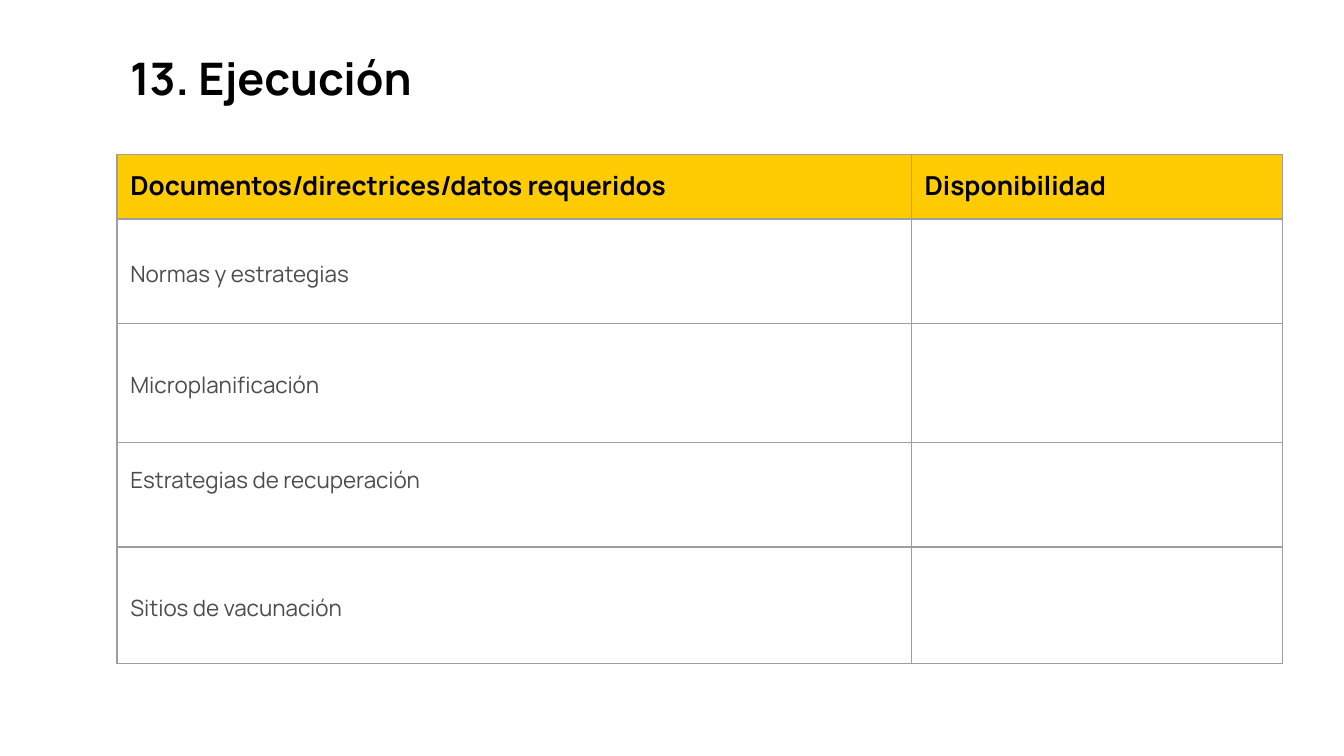
"""Build the slide on execution: a title and a table of required documents."""
from dataclasses import dataclass

from lxml import etree
from pptx import Presentation
from pptx.dml.color import RGBColor
from pptx.enum.text import MSO_ANCHOR
from pptx.oxml.ns import qn
from pptx.util import Inches, Pt

TOP, MIDDLE = MSO_ANCHOR.TOP, MSO_ANCHOR.MIDDLE
FONT = "Manrope"
BLACK, GREY, GOLD, RULE = "000000", "4C4C4C", "FFCB03", "9E9E9E"
PAD = 0.1
LEFT = 0.87
WIDTHS = (5.91, 2.76)


@dataclass(frozen=True)
class Style:
    size: int
    color: str
    bold: bool
    lead: float = 1.0


@dataclass(frozen=True)
class Row:
    texts: tuple[str, ...]
    height: float
    head: bool = False
    base: float = PAD


TITLE = Style(24, BLACK, True)
HEAD = Style(14, BLACK, True)
BODY = Style(12, GREY, False, 1.15)
ROWS = (
    Row(("Documentos/directrices/datos requeridos", "Disponibilidad"), 0.48, head=True),
    Row(("Normas y estrategias", ""), 0.78),
    Row(("Microplanificación", ""), 0.88),
    Row(("Estrategias de recuperación", ""), 0.78, base=0.36),
    Row(("Sitios de vacunación", ""), 0.87),
)


def rgb(code: str) -> RGBColor:
    return RGBColor.from_string(code)


def pad(box, base: float = PAD) -> None:
    box.margin_left = box.margin_right = box.margin_top = Inches(PAD)
    box.margin_bottom = Inches(base)


def write(frame, text: str, style: Style) -> None:
    para = frame.paragraphs[0]
    para.line_spacing = style.lead
    para.font.size = Pt(style.size)
    if text:
        run = para.add_run()
        run.text = text
        run.font.name = FONT
        run.font.size = Pt(style.size)
        run.font.bold = style.bold
        run.font.color.rgb = rgb(style.color)


def edge(cell) -> None:
    props = cell._tc.get_or_add_tcPr()
    for side in ("a:lnL", "a:lnR", "a:lnT", "a:lnB"):
        line = etree.SubElement(props, qn(side), w=str(Pt(0.75)))
        fill = etree.SubElement(line, qn("a:solidFill"))
        etree.SubElement(fill, qn("a:srgbClr"), val=RULE)


def fill_cell(cell, text: str, row: Row) -> None:
    edge(cell)
    if row.head:
        cell.fill.solid()
        cell.fill.fore_color.rgb = rgb(GOLD)
    else:
        cell.fill.background()
    pad(cell, row.base)
    cell.vertical_anchor = TOP if row.head else MIDDLE
    write(cell.text_frame, text, HEAD if row.head else BODY)


def add_title(slide, text: str) -> None:
    box = slide.shapes.add_textbox(Inches(LEFT), Inches(0.28), Inches(9.13), Inches(0.59))
    frame = box.text_frame
    frame.word_wrap = True
    frame.vertical_anchor = MIDDLE
    pad(frame)
    write(frame, text, TITLE)


def add_grid(slide, rows: tuple[Row, ...]) -> None:
    tall = sum(row.height for row in rows)
    grid = slide.shapes.add_table(
        len(rows), len(WIDTHS), Inches(LEFT), Inches(1.15), Inches(sum(WIDTHS)), Inches(tall)
    ).table
    grid.horz_banding = False
    for col, width in zip(grid.columns, WIDTHS):
        col.width = Inches(width)
    for line, row in zip(grid.rows, rows):
        line.height = Inches(row.height)
        for cell, text in zip(line.cells, row.texts):
            fill_cell(cell, text, row)


def main() -> None:
    deck = Presentation()
    deck.slide_width = Inches(10)
    deck.slide_height = Inches(10 * 9 / 16)
    slide = deck.slides.add_slide(deck.slide_layouts[6])
    add_title(slide, "13. Ejecución")
    add_grid(slide, ROWS)
    deck.save("out.pptx")


if __name__ == "__main__":
    main()
